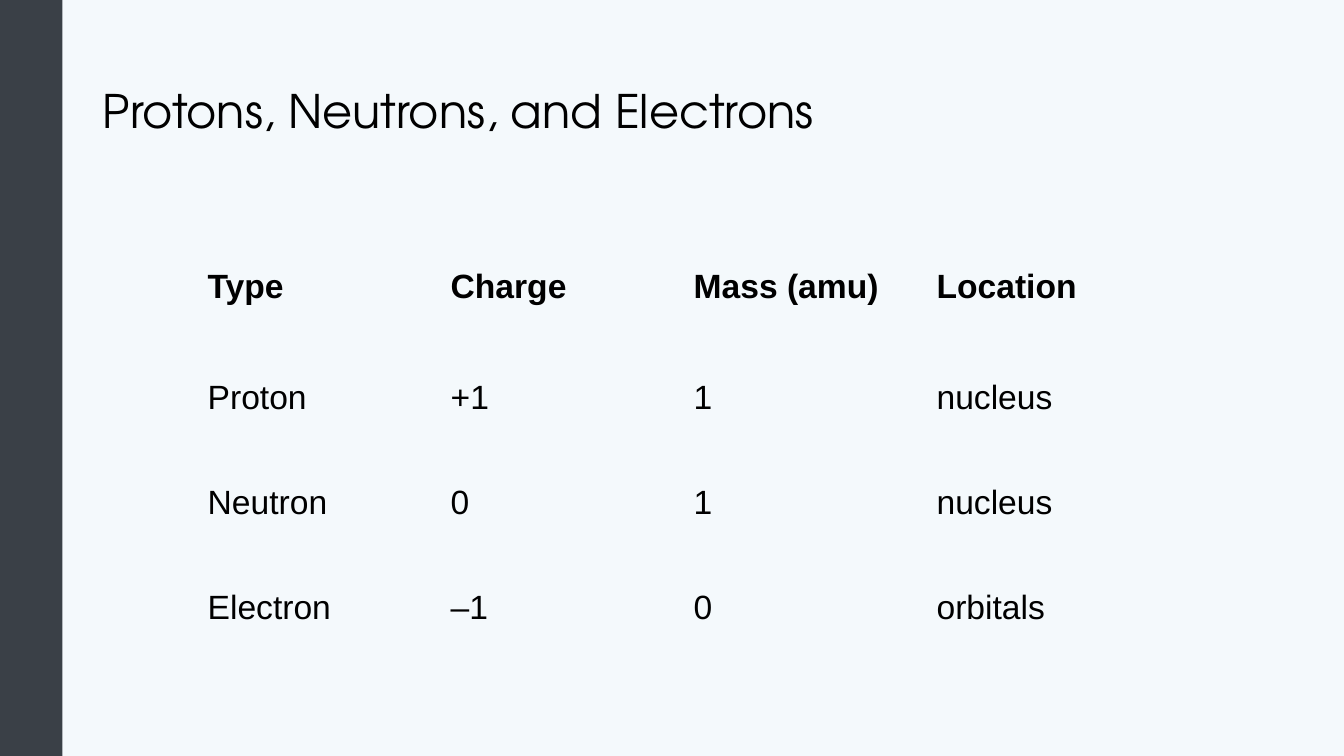
from pptx import Presentation
from pptx.dml.color import RGBColor
from pptx.enum.shapes import MSO_SHAPE
from pptx.enum.text import MSO_ANCHOR, PP_ALIGN
from pptx.oxml.ns import qn
from pptx.util import Inches, Pt

PALE_BLUE = RGBColor(0xF4, 0xF9, 0xFC)
SLATE = RGBColor(0x3A, 0x40, 0x47)
BLACK = RGBColor(0x00, 0x00, 0x00)

PLAIN_TABLE_STYLE = "{2D5ABB26-0587-4C30-8999-92F81FD0307C}"

PARTICLES = [
    ("Type", "Charge", "Mass (amu)", "Location"),
    ("Proton", "+1", "1", "nucleus"),
    ("Neutron", "0", "1", "nucleus"),
    ("Electron", "–1", "0", "orbitals"),
]


def apply(target, values):
    """Set each attribute named in the dict on the target."""
    for name, value in values.items():
        setattr(target, name, value)


class SlideBuilder:
    title_font = {"name": "TeX Gyre Adventor", "size": Pt(33), "bold": False}
    table_font = {"name": "Arial", "size": Pt(24)}

    def __init__(self, deck):
        self.slide = deck.slides.add_slide(deck.slide_layouts.get_by_name("Title Only"))
        background = self.slide.background.fill
        background.solid()
        background.fore_color.rgb = PALE_BLUE

    def add_text(self, frame, text, font):
        para = frame.paragraphs[0]
        para.alignment = PP_ALIGN.LEFT
        span = para.add_run()
        span.text = text
        apply(span.font, font)
        span.font.color.rgb = BLACK
        return para

    def bar(self, left, top, width, height):
        box = self.slide.shapes.add_shape(
            MSO_SHAPE.RECTANGLE, Inches(left), Inches(top), Inches(width), Inches(height))
        box.shadow.inherit = False
        box.fill.solid()
        box.fill.fore_color.rgb = SLATE
        box.line.fill.background()

    def title(self, text, left, top, width, height):
        box = self.slide.shapes.title
        apply(box, {"left": Inches(left), "top": Inches(top),
                    "width": Inches(width), "height": Inches(height)})
        box.text_frame.vertical_anchor = MSO_ANCHOR.MIDDLE
        self.add_text(box.text_frame, text, self.title_font).line_spacing = 0.9

    def table(self, records, left, top, column_width, header_height, row_height):
        rows, columns = len(records), len(records[0])
        height = header_height + row_height * (rows - 1)
        frame = self.slide.shapes.add_table(
            rows, columns, Inches(left), Inches(top),
            Inches(column_width * columns), Inches(height))
        frame.element.find(".//" + qn("a:tableStyleId")).text = PLAIN_TABLE_STYLE
        table = frame.table
        table.horz_banding = False
        for column in table.columns:
            column.width = Inches(column_width)
        for index, record in enumerate(records):
            is_header = index == 0
            table.rows[index].height = Inches(header_height if is_header else row_height)
            margin = Inches(0.08 if is_header else 0.05)
            for cell, text in zip(table.rows[index].cells, record):
                apply(cell, {"margin_left": Inches(0.22), "margin_right": Inches(0.22),
                             "margin_top": margin, "margin_bottom": margin,
                             "vertical_anchor": MSO_ANCHOR.MIDDLE})
                cell.fill.background()
                self.add_text(cell.text_frame, text, {**self.table_font, "bold": is_header})


def main():
    deck = Presentation()
    apply(deck, {"slide_width": Inches(13.33), "slide_height": Inches(7.5)})
    page = SlideBuilder(deck)
    page.bar(0, 0, 0.62, 7.5)
    page.title("Protons, Neutrons, and Electrons", 0.92, 0.4, 11.5, 1.45)
    page.table(PARTICLES, 1.84, 2.26, column_width=2.41, header_height=1.17, row_height=1.04)
    deck.save("out.pptx")


if __name__ == "__main__":
    main()
